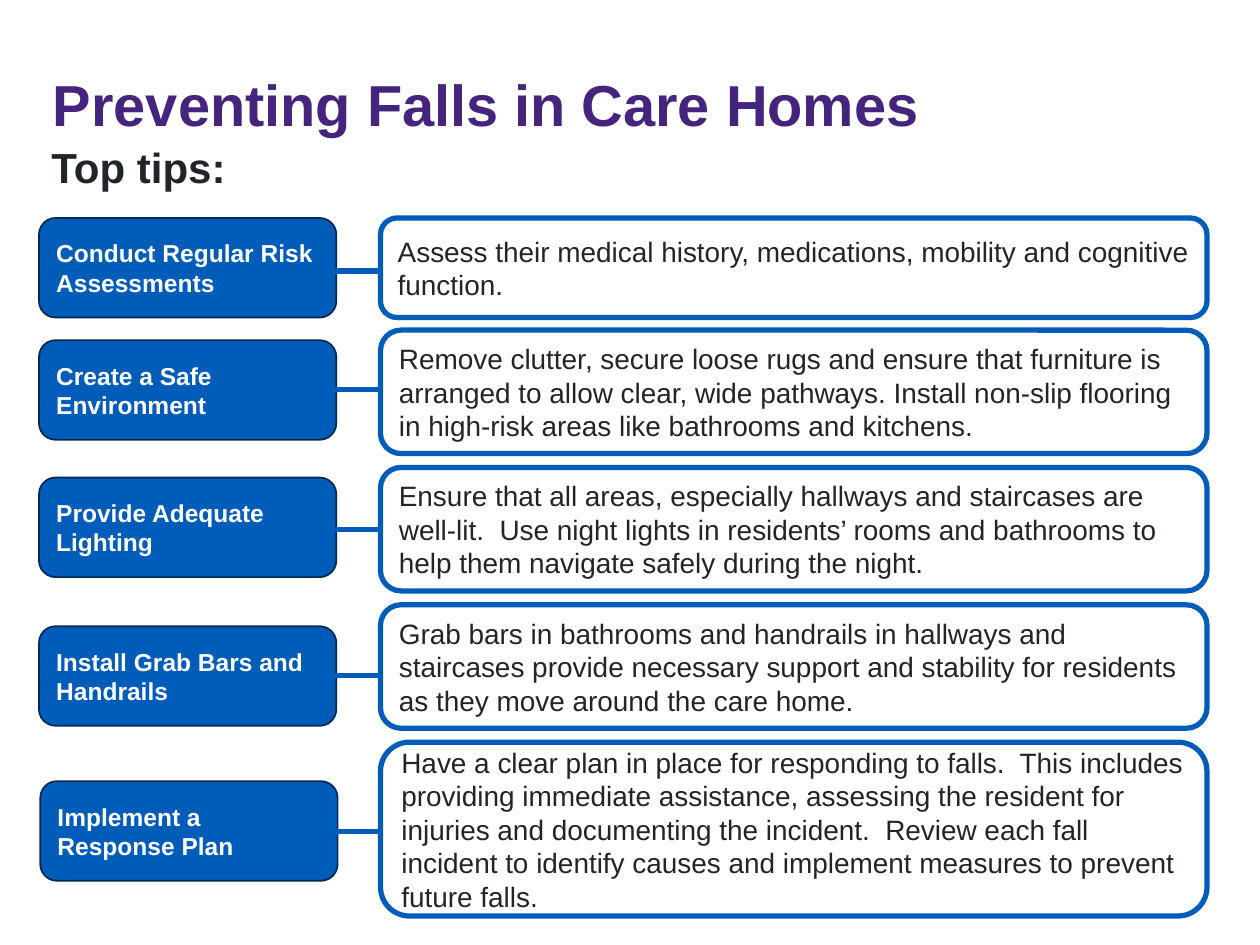
"""Build the slide of top tips for preventing falls in care homes."""
from lxml import etree
from pptx import Presentation
from pptx import util as u
from pptx.dml.color import RGBColor
from pptx.enum import shapes, text
from pptx.oxml.ns import qn

TIPS = [
    ("Conduct Regular Risk Assessments", 0.31, 1.73, 1.73, 0.79, 2.15,
     "Assess their medical history, medications, mobility and cognitive function."),
    ("Create a Safe Environment", 0.31, 2.7, 2.62, 0.98, 3.09,
     "Remove clutter, secure loose rugs and ensure that furniture is arranged to allow "
     "clear, wide pathways. Install non-slip flooring in high-risk areas like bathrooms "
     "and kitchens."),
    ("Provide Adequate Lighting", 0.31, 3.79, 3.71, 0.98, 4.2,
     "Ensure that all areas, especially hallways and staircases are well-lit.  Use night "
     "lights in residents’ rooms and bathrooms to help them navigate safely during the "
     "night."),
    ("Install Grab Bars and Handrails", 0.31, 4.97, 4.8, 0.98, 5.36,
     "Grab bars in bathrooms and handrails in hallways and staircases provide necessary "
     "support and stability for residents as they move around the care home."),
    ("Implement a Response Plan", 0.32, 6.2, 5.89, 1.38, 6.6,
     "Have a clear plan in place for responding to falls.  This includes providing "
     "immediate assistance, assessing the resident for injuries and documenting the "
     "incident.  Review each fall incident to identify causes and implement measures to "
     "prevent future falls."),
]


def rgb(value):
    """Return the colour for a hex string."""
    return RGBColor.from_string(value)


class TipSlide:
    """Hold the style and the current slide."""

    FONT = "Arial"
    PURPLE, BLUE, NAVY = "44247D", "005CB9", "002851"
    INK, WHITE = "212529", "FFFFFF"

    def __init__(self, prs):
        """Add a title-only slide."""
        self.s = prs.slides.add_slide(prs.slide_layouts[5])

    def set_text(self, sp, words, size, color, bold=False, anchor=text.MSO_ANCHOR.TOP):
        """Put one left-aligned paragraph in a shape and return it."""
        tf = sp.text_frame
        tf.text = words
        tf.word_wrap = True
        tf.auto_size = text.MSO_AUTO_SIZE.NONE
        tf.vertical_anchor = anchor
        p = tf.paragraphs[0]
        p.alignment = text.PP_ALIGN.LEFT
        font = p.runs[0].font
        font.name, font.size, font.bold = self.FONT, u.Pt(size), bold
        font.color.rgb = rgb(color)
        return p

    def title(self, words, x, y, w, h):
        """Move and format the title placeholder."""
        sp = self.s.shapes.title
        sp.left, sp.top, sp.width, sp.height = map(u.Inches, (x, y, w, h))
        self.set_text(sp, words, 33, self.PURPLE, True).line_spacing = 0.9

    def heading(self, words, x, y, w, h):
        """Add the heading above the tips."""
        sp = self.s.shapes.add_textbox(*map(u.Inches, (x, y, w, h)))
        self.set_text(sp, words, 24, self.INK, True).line_spacing = 0.9

    def box(self, words, x, y, w, h, size, color, line, weight, fill=None):
        """Add a rounded box, bold when it is filled."""
        sp = self.s.shapes.add_shape(
            shapes.MSO_SHAPE.ROUNDED_RECTANGLE, *map(u.Inches, (x, y, w, h)))
        sp.shadow.inherit = False
        if fill:
            sp.fill.solid()
            sp.fill.fore_color.rgb = rgb(fill)
        else:
            sp.fill.background()
        sp.line.color.rgb = rgb(line)
        sp.line.width = u.Pt(weight)
        self.set_text(sp, words, size, color, bool(fill), text.MSO_ANCHOR.MIDDLE)
        return sp

    def link(self, x1, x2, y, target):
        """Add a level line, joined to the target where it meets its middle."""
        c = self.s.shapes.add_connector(
            shapes.MSO_CONNECTOR.STRAIGHT, *map(u.Inches, (x1, y, x2, y)))
        c.line.color.rgb = rgb(self.BLUE)
        c.line.width = u.Pt(3)
        etree.SubElement(c._element.spPr, qn("a:effectLst"))
        if abs(target.top + target.height / 2 - u.Inches(y)) < u.Inches(0.01) / 2:
            c.end_connect(target, 1)

    def tip(self, label, x, label_y, y, h, link_y, advice):
        """Add one label, its advice and the line between them."""
        self.box(label, x, label_y, 2.36, 0.79, 14, self.WHITE, self.NAVY, 1, self.BLUE)
        sp = self.box(advice, 3.02, y, 6.56, h, 16, self.INK, self.BLUE, 3)
        self.link(2.63, 3.02, link_y, sp)


def main():
    """Build and save the presentation."""
    prs = Presentation()
    prs.slide_width, prs.slide_height = u.Inches(10), u.Inches(7.5)
    slide = TipSlide(prs)
    slide.title("Preventing Falls in Care Homes", 0.32, 0.56, 7.69, 0.73)
    slide.heading("Top tips:", 0.31, 1.12, 9.28, 6.15)
    for tip in TIPS:
        slide.tip(*tip)
    prs.save("out.pptx")


if __name__ == "__main__":
    main()
